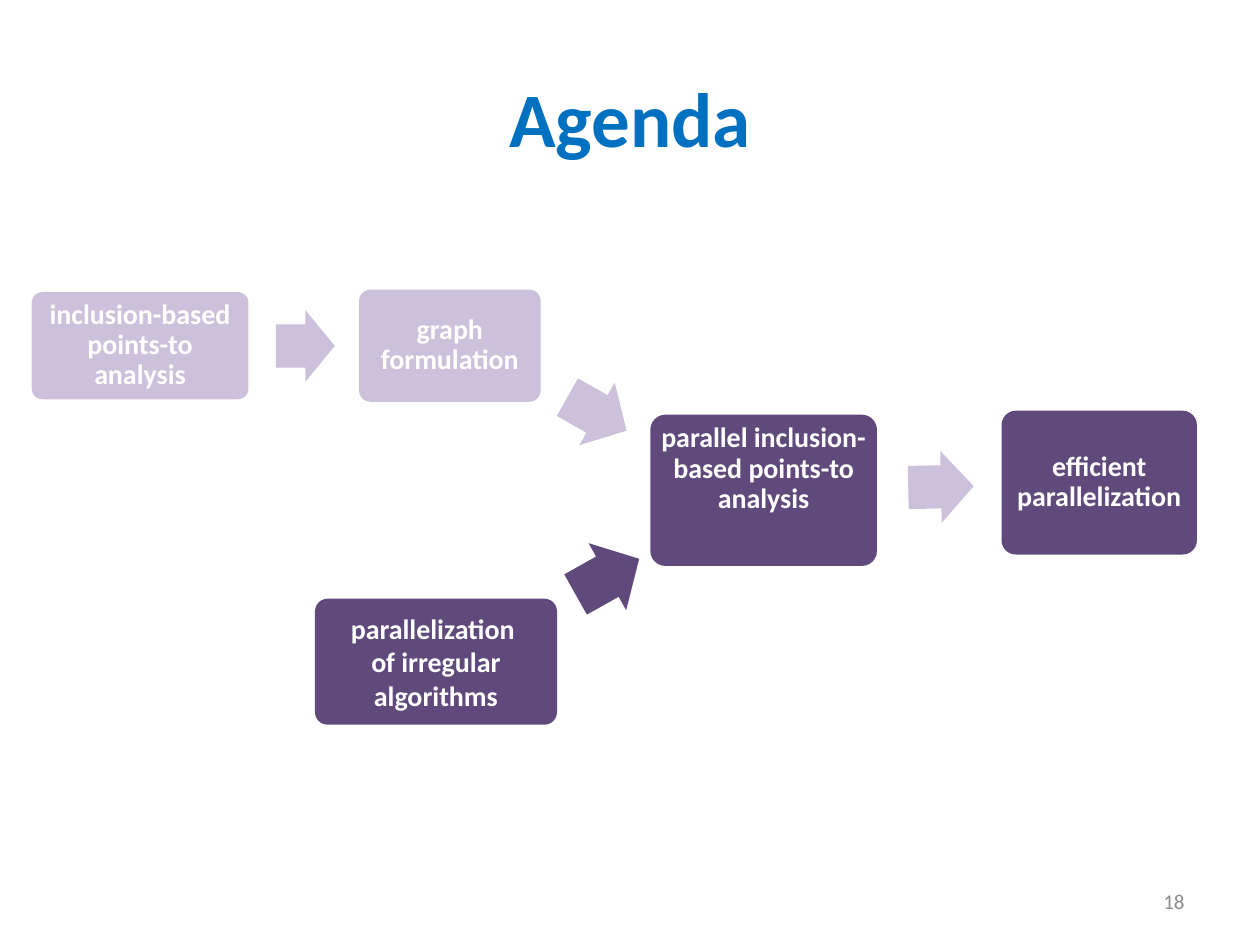
from pptx import Presentation
from pptx.dml.color import RGBColor
from pptx.enum.shapes import MSO_SHAPE
from pptx.enum.text import MSO_ANCHOR, PP_ALIGN
from pptx.util import Cm, Pt

ROUND_RECT, RIGHT_ARROW = MSO_SHAPE.ROUNDED_RECTANGLE, MSO_SHAPE.RIGHT_ARROW
TOP, MIDDLE = MSO_ANCHOR.TOP, MSO_ANCHOR.MIDDLE
CENTER, RIGHT = PP_ALIGN.CENTER, PP_ALIGN.RIGHT

COLORS = {"title": "0070C0", "light": "CCC1DA", "dark": "604A7B",
          "white": "FFFFFF", "gray": "8C8C8C"}
FONT = "Calibri"
CORNER = 0.1
STEP_INSET = 0.18
DEFAULT_INSETS = (0.25, 0.13)

# text, (left, top, width, height) in cm, colour, anchor
STEPS = [
    ("inclusion-based points-to analysis", (0.64, 5.89, 4.37, 2.16), "light", MIDDLE),
    ("graph formulation", (7.24, 5.84, 3.66, 2.26), "light", MIDDLE),
    ("parallel inclusion-based points-to analysis", (13.11, 8.36, 4.57, 3.05), "dark", TOP),
    ("efficient parallelization", (20.19, 8.28, 3.94, 2.9), "dark", MIDDLE),
]
INPUT_STEP = ("parallelization \nof irregular algorithms", (6.35, 12.07, 4.88, 2.54), "dark")
# (left, top, width, height) in cm, rotation in degrees, colour
ARROWS = [
    ((5.56, 6.25, 1.19, 1.45), 0, "light"),
    ((11.35, 7.62, 1.37, 1.45), 29.5, "light"),
    ((18.31, 9.09, 1.32, 1.45), 358.8, "light"),
    ((11.51, 10.85, 1.47, 1.55), 330.7, "dark"),
]


def write(s, text, size=16, color="white", bold=True, align=CENTER,
          anchor=MIDDLE, spacing=None, insets=DEFAULT_INSETS):
    tf = s.text_frame
    tf.word_wrap = True
    tf.vertical_anchor = anchor
    tf.margin_left = tf.margin_right = Cm(insets[0])
    tf.margin_top = tf.margin_bottom = Cm(insets[1])
    tf.text = text
    for p in tf.paragraphs:
        p.alignment = align
        if spacing:
            p.line_spacing = spacing
        for r in p.runs:
            r.font.name, r.font.size, r.font.bold = FONT, Pt(size), bold
            r.font.color.rgb = RGBColor.from_string(COLORS[color])


def add_shape(slide, kind, box, color, adjustments):
    s = slide.shapes.add_shape(kind, *map(Cm, box))
    for i, value in enumerate(adjustments):
        s.adjustments[i] = value
    s.shadow.inherit = False
    s.fill.solid()
    s.fill.fore_color.rgb = RGBColor.from_string(COLORS[color])
    s.line.fill.background()
    return s


def add_step(slide, text, box, color, **fmt):
    s = add_shape(slide, ROUND_RECT, box, color, [CORNER])
    write(s, text, **fmt)


def main():
    prs = Presentation()
    prs.slide_width, prs.slide_height = Cm(25.4), Cm(19.05)
    slide = prs.slides.add_slide(prs.slide_layouts[5])

    title = slide.shapes.title
    title.left, title.top, title.width, title.height = map(Cm, (1.27, 0.76, 22.86, 3.18))
    write(title, "Agenda", size=44, color="title")

    for text, box, color, anchor in STEPS:
        # The rounded corners already inset the text by 0.29 of their radius.
        inset = STEP_INSET - 0.29 * CORNER * min(box[2:])
        add_step(slide, text, box, color, anchor=anchor, spacing=0.9, insets=(inset, inset))
    add_step(slide, *INPUT_STEP)

    for box, rotation, color in ARROWS:
        arrow = add_shape(slide, RIGHT_ARROW, box, color, [0.6, 0.5])
        arrow.rotation = rotation

    number = slide.shapes.add_textbox(*map(Cm, (18.21, 17.65, 5.92, 1.02)))
    write(number, "18", size=12, color="gray", bold=False, align=RIGHT)

    prs.save("out.pptx")


if __name__ == "__main__":
    main()
